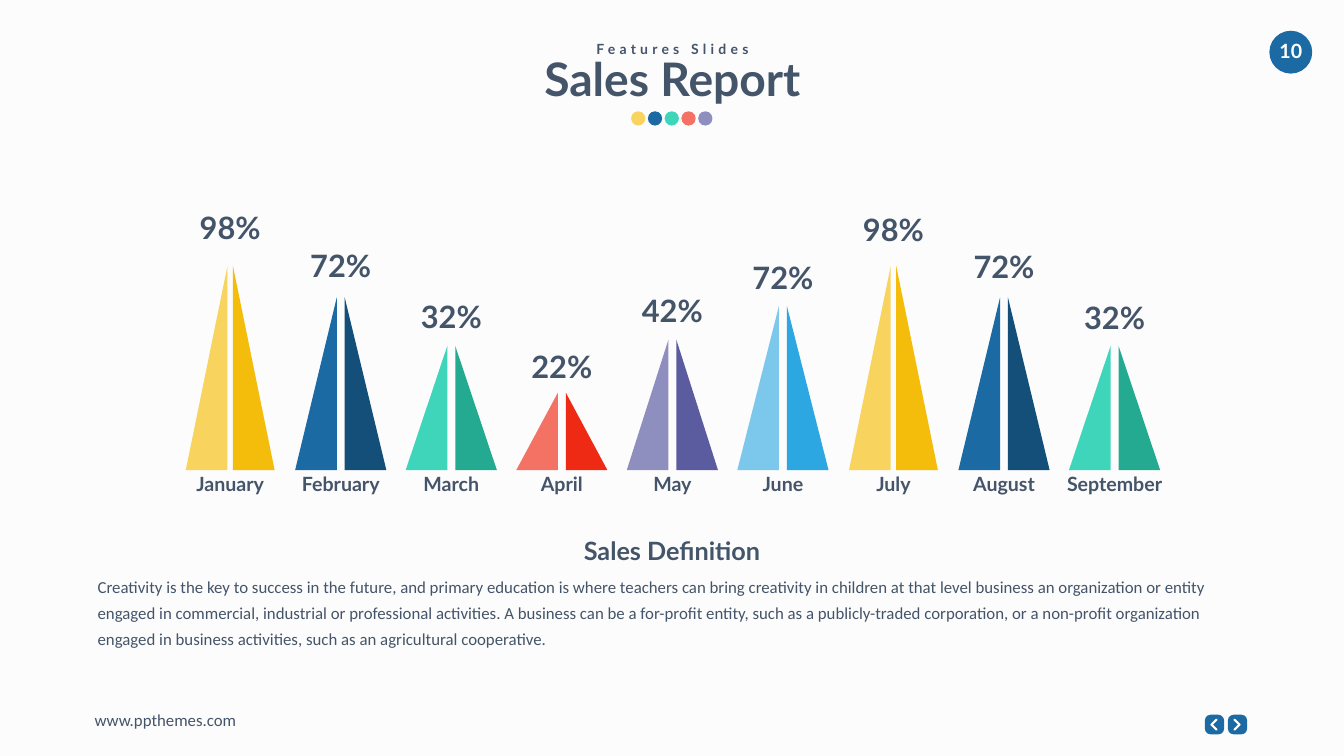
from pptx import Presentation
from pptx.dml.color import RGBColor
from pptx.enum.shapes import MSO_SHAPE
from pptx.enum.text import MSO_ANCHOR, MSO_AUTO_SIZE, PP_ALIGN
from pptx.oxml.ns import qn
from pptx.util import Cm, Pt

PAPER = RGBColor(0xFC, 0xFC, 0xFC)
WHITE = RGBColor(0xFF, 0xFF, 0xFF)
INK = RGBColor(0x44, 0x54, 0x69)
YELLOW, AMBER = RGBColor(0xF8, 0xD3, 0x5E), RGBColor(0xF4, 0xBD, 0x0C)
BLUE, NAVY = RGBColor(0x1B, 0x6A, 0xA3), RGBColor(0x14, 0x4F, 0x7A)
MINT, GREEN = RGBColor(0x3F, 0xD5, 0xBA), RGBColor(0x25, 0xAA, 0x92)
CORAL, RED = RGBColor(0xF4, 0x72, 0x64), RGBColor(0xEE, 0x29, 0x14)
LILAC, PURPLE = RGBColor(0x8F, 0x8F, 0xBF), RGBColor(0x5B, 0x5B, 0x9F)
SKY, AZURE = RGBColor(0x7C, 0xC8, 0xEC), RGBColor(0x2D, 0xA7, 0xE1)

HEAD = {"name": "Lato", "bold": True}
BODY = {"name": "Calibri", "bold": False}
ZERO = {"margin_left": 0, "margin_top": 0, "margin_right": 0, "margin_bottom": 0}


def write(frame, text, size, look=HEAD, color=INK, align=PP_ALIGN.CENTER, wrap=False):
    frame.auto_size = MSO_AUTO_SIZE.NONE
    frame.word_wrap = wrap
    para = frame.paragraphs[0]
    para.alignment = align
    run = para.add_run()
    run.text = text
    run.font.size = Pt(size)
    run.font.color.rgb = color
    for key, value in look.items():
        setattr(run.font, key, value)


def paint(shape, color):
    """Give a shape one flat colour, with no outline or shadow."""
    shape.shadow.inherit = False
    shape.fill.solid()
    shape.fill.fore_color.rgb = color
    shape.line.fill.background()


deck = Presentation()
deck.slide_width, deck.slide_height = Cm(67.72), Cm(38.1)
slide = deck.slides.add_slide(deck.slide_layouts[5])
slide.background.fill.solid()
slide.background.fill.fore_color.rgb = PAPER
shapes = slide.shapes

# Title, kicker and dots
title = shapes.title
place = {"left": Cm(27.28), "top": Cm(2.54), "width": Cm(13.2), "height": Cm(2.82)}
for key, value in place.items():
    setattr(title, key, value)
for key, value in ZERO.items():
    setattr(title.text_frame, key, value)
write(title.text_frame, "Sales Report", 66)

kicker = shapes.add_textbox(Cm(29.62), Cm(1.9), Cm(8.53), Cm(1.12))
write(kicker.text_frame, "Features Slides", 20)
for props in kicker.element.iter(qn("a:rPr")):
    props.set("spc", "600")

for i, color in enumerate([YELLOW, BLUE, MINT, CORAL, LILAC]):
    dot = shapes.add_shape(MSO_SHAPE.OVAL, Cm(31.8 + 0.845 * i), Cm(5.61), Cm(0.72), Cm(0.72))
    paint(dot, color)

# Page number
badge = shapes.add_shape(MSO_SHAPE.OVAL, Cm(63.96), Cm(1.55), Cm(2.16), Cm(2.16))
paint(badge, BLUE)
for key, value in {**ZERO, "margin_bottom": Cm(0.2)}.items():
    setattr(badge.text_frame, key, value)
badge.text_frame.vertical_anchor = MSO_ANCHOR.MIDDLE
write(badge.text_frame, "10", 28, color=WHITE)

# Cones: month, label width, share, share top, cone height, half gap, colours
CONES = [
    ("January", 4.14, "98%", 10.41, 10.29, 0.14, YELLOW, AMBER),
    ("February", 4.57, "72%", 12.32, 8.71, 0.2, BLUE, NAVY),
    ("March", 3.4, "32%", 14.86, 6.27, 0.2, MINT, GREEN),
    ("April", 2.74, "22%", 17.42, 3.91, 0.2, CORAL, RED),
    ("May", 2.49, "42%", 14.58, 6.58, 0.2, LILAC, PURPLE),
    ("June", 2.67, "72%", 12.93, 8.28, 0.2, SKY, AZURE),
    ("July", 2.39, "98%", 10.49, 10.29, 0.14, YELLOW, AMBER),
    ("August", 3.68, "72%", 12.37, 8.71, 0.2, BLUE, NAVY),
    ("September", 5.41, "32%", 14.91, 6.27, 0.2, MINT, GREEN),
]
FIRST, PITCH, BASE, HALF = 11.6, 5.57, 23.7, 2.1

for i, (month, wide, share, top, tall, gap, light, dark) in enumerate(CONES):
    mid = FIRST + PITCH * i
    for side, color in ((-1, light), (1, dark)):
        inner = mid + side * gap
        path = shapes.build_freeform(Cm(inner), Cm(BASE - tall))
        path.add_line_segments([
            (Cm(inner), Cm(BASE)),
            (Cm(inner + side * HALF), Cm(BASE)),
        ])
        paint(path.convert_to_shape(), color)
    for text, size, y, width, height in (
        (share, 44, top, 3.58, 2.13),
        (month, 28, 23.67, wide, 1.45),
    ):
        label = shapes.add_textbox(Cm(mid - width / 2), Cm(y), Cm(width), Cm(height))
        write(label.text_frame, text, size)

# Definition
lead = shapes.add_textbox(Cm(28.68), Cm(26.97), Cm(10.36), Cm(1.55))
for key, value in ZERO.items():
    setattr(lead.text_frame, key, value)
lead.text_frame.vertical_anchor = MSO_ANCHOR.MIDDLE
write(lead.text_frame, "Sales Definition", 36)

prose = shapes.add_textbox(Cm(4.67), Cm(28.63), Cm(58.37), Cm(4.22))
write(
    prose.text_frame,
    "Creativity is the key to success in the future, and primary education is where "
    "teachers can bring creativity in children at that level business an organization "
    "or entity engaged in commercial, industrial or professional activities. A business "
    "can be a for-profit entity, such as a publicly-traded corporation, or a non-profit "
    "organization engaged in business activities, such as an agricultural cooperative.",
    24, BODY, align=PP_ALIGN.LEFT, wrap=True,
)
prose.text_frame.paragraphs[0].line_spacing = 1.3

# Footer
site = shapes.add_textbox(Cm(4.52), Cm(35.66), Cm(10.16), Cm(1.27))
write(site.text_frame, "www.ppthemes.com", 24, BODY, align=PP_ALIGN.LEFT, wrap=True)

for left, side in ((60.71, -1), (61.87, 1)):
    key = shapes.add_shape(MSO_SHAPE.ROUNDED_RECTANGLE, Cm(left), Cm(36.02), Cm(0.97), Cm(0.99))
    key.adjustments[0] = 0.3
    paint(key, BLUE)
    mid = left + 0.46
    arm = Cm(mid - side * 0.13)
    path = shapes.build_freeform(arm, Cm(36.27))
    path.add_line_segments([(Cm(mid + side * 0.13), Cm(36.52)), (arm, Cm(36.77))], close=False)
    arrow = path.convert_to_shape()
    arrow.shadow.inherit = False
    arrow.fill.background()
    arrow.line.color.rgb = WHITE
    arrow.line.width = Pt(3)
    arrow.element.spPr.find(qn("a:ln")).set("cap", "rnd")

deck.save("out.pptx")
